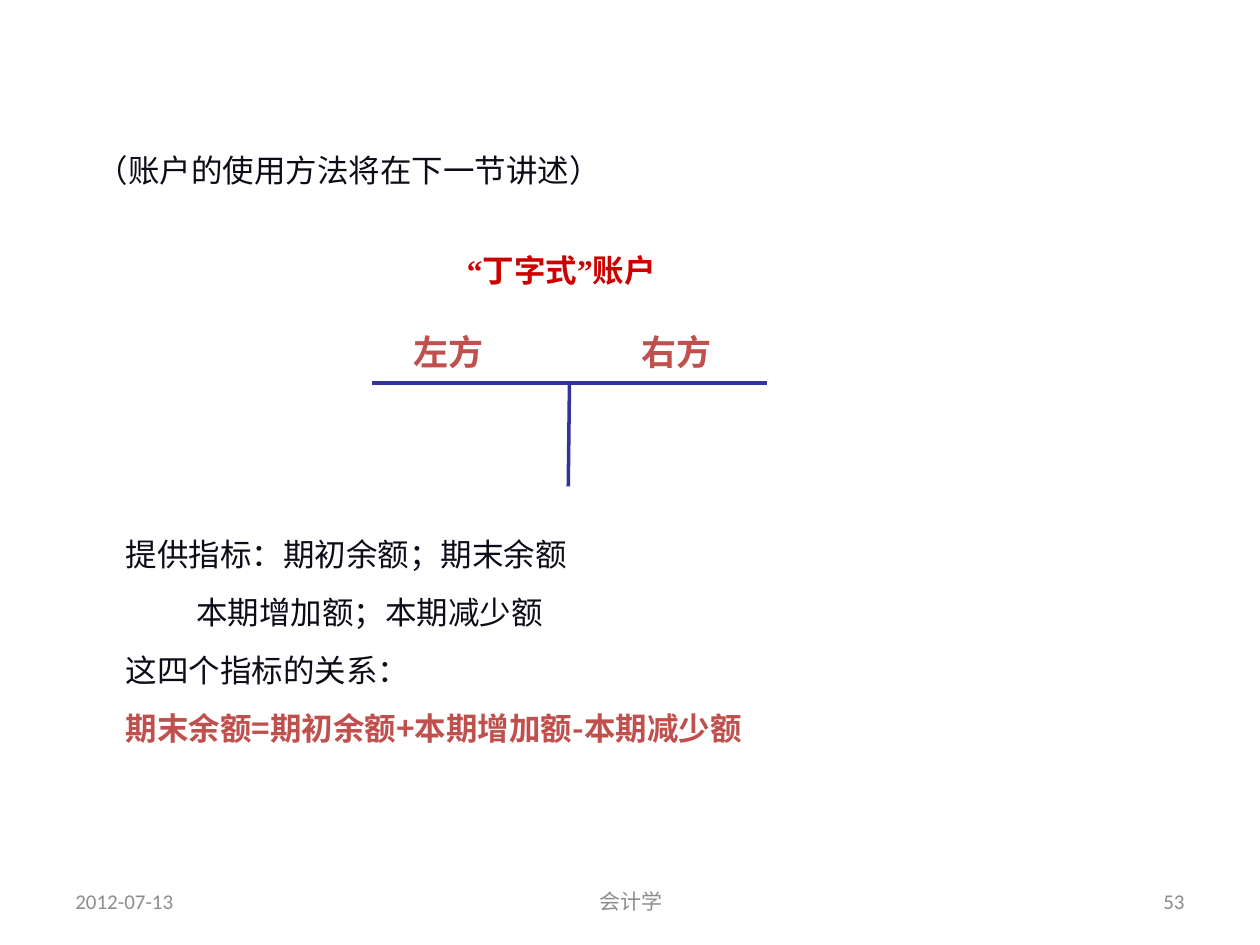
"""Build the T-account slide with its two sides, indicators and balance formula."""
from dataclasses import dataclass

from lxml import etree
from pptx import Presentation
from pptx.dml.color import RGBColor
from pptx.enum.shapes import MSO_CONNECTOR
from pptx.enum.text import MSO_ANCHOR, PP_ALIGN
from pptx.oxml.ns import qn
from pptx.util import Inches, Pt

LEFT, CENTER, RIGHT = PP_ALIGN.LEFT, PP_ALIGN.CENTER, PP_ALIGN.RIGHT
TOP, MIDDLE = MSO_ANCHOR.TOP, MSO_ANCHOR.MIDDLE
STRAIGHT = MSO_CONNECTOR.STRAIGHT

INK = RGBColor(0x0B, 0x0C, 0x17)
GRAY = RGBColor(0x8C, 0x8C, 0x8C)
RED = RGBColor(0xCC, 0x00, 0x00)
BRICK = RGBColor(0xC0, 0x50, 0x4D)
NAVY = RGBColor(0x33, 0x33, 0x99)
CJK, SERIF, SANS = "Noto Sans CJK SC", "Times New Roman", "Calibri"


@dataclass(frozen=True)
class Span:
    text: str
    color: RGBColor = INK
    size: int = 18
    bold: bool = False
    font: str = CJK


@dataclass(frozen=True)
class Line:
    spans: tuple[Span, ...]
    align: PP_ALIGN = LEFT
    before_percent: int = 0
    spacing: float = 1.0
    indent: float = 0


@dataclass(frozen=True)
class Block:
    left: float
    top: float
    width: float
    height: float
    lines: tuple[Line, ...]
    anchor: MSO_ANCHOR = TOP
    wrap: bool = True


def add_span(paragraph, span: Span) -> None:
    """Append one formatted run, with its East Asian font."""
    run = paragraph.add_run()
    run.text = span.text
    font = run.font
    font.name, font.size, font.bold = span.font, Pt(span.size), span.bold
    font.color.rgb = span.color
    east_asian = etree.Element(qn("a:ea"), typeface=CJK if span.font == SANS else span.font)
    font._element.find(qn("a:latin")).addnext(east_asian)


def format_line(paragraph, line: Line) -> None:
    """Apply alignment, indent and spacing, then add the runs."""
    paragraph.alignment = line.align
    paragraph.line_spacing = line.spacing
    properties = paragraph._p.get_or_add_pPr()
    properties.set("marL", str(Inches(line.indent)))
    properties.set("indent", "0")
    if line.before_percent:
        before = etree.Element(qn("a:spcBef"))
        etree.SubElement(before, qn("a:spcPct"), val=str(line.before_percent * 1000))
        properties.find(qn("a:lnSpc")).addnext(before)
    for span in line.spans:
        add_span(paragraph, span)


def add_block(slide, block: Block) -> None:
    """Add a text box with all its lines."""
    frame = slide.shapes.add_textbox(
        Inches(block.left), Inches(block.top), Inches(block.width), Inches(block.height)
    ).text_frame
    frame.word_wrap = block.wrap
    frame.vertical_anchor = block.anchor
    for index, line in enumerate(block.lines):
        format_line(frame.add_paragraph() if index else frame.paragraphs[0], line)


def add_rule(slide, start: tuple[float, float], end: tuple[float, float]) -> None:
    """Draw one stroke of the T."""
    rule = slide.shapes.add_connector(STRAIGHT, *map(Inches, start + end))
    rule.line.color.rgb = NAVY
    rule.line.width = Pt(2)
    etree.SubElement(rule._element.spPr, qn("a:effectLst"))


def footer(text: str, left: float, width: float, align: PP_ALIGN) -> Block:
    """Describe one footer item."""
    return Block(left, 6.95, width, 0.4, (Line((Span(text, GRAY, 12, font=SANS),), align),), MIDDLE)


def side(text: str, left: float) -> Block:
    """Describe the heading of one side of the account."""
    return Block(left, 2.57, 0.84, 0.43, (Line((Span(text, BRICK, 20, True),), CENTER, 50),))


def indicator(text: str, indent: float = 0, color: RGBColor = INK, bold: bool = False) -> Line:
    """Describe one line of the indicator list."""
    return Line((Span(text, color, bold=bold),), LEFT, 40, 1.2, indent)


ACCOUNT_NAME = tuple(
    Span(text, RED, bold=True, font=font)
    for text, font in (("“", SERIF), ("丁字式", CJK), ("”", SERIF), ("账户", CJK))
)

BLOCKS = (
    footer("2012-07-13", 0.5, 2.33, LEFT),
    footer("会计学", 3.42, 3.17, CENTER),
    footer("53", 7.17, 2.33, RIGHT),
    Block(0.67, 1.15, 5.53, 0.5, (Line((Span("（账户的使用方法将在下一节讲述）"),)),), wrap=False),
    Block(2.72, 1.94, 3.47, 0.5, (Line(ACCOUNT_NAME, CENTER, 50),)),
    side("左方 ", 3.17),
    side("右方 ", 4.98),
    Block(0.9, 4.14, 7.17, 2.5, (
        indicator("提供指标：期初余额；期末余额"),
        indicator("本期增加额；本期减少额", indent=0.56),
        indicator("这四个指标的关系："),
        indicator("期末余额=期初余额+本期增加额-本期减少额", color=BRICK, bold=True),
    )),
)


def main() -> None:
    """Create and save the presentation."""
    deck = Presentation()
    deck.slide_width, deck.slide_height = Inches(10), Inches(7.5)
    slide = deck.slides.add_slide(deck.slide_layouts[6])
    add_rule(slide, (2.95, 3.04), (6.09, 3.04))
    add_rule(slide, (4.52, 3.04), (4.51, 3.86))
    for block in BLOCKS:
        add_block(slide, block)
    deck.save("out.pptx")


if __name__ == "__main__":
    main()
